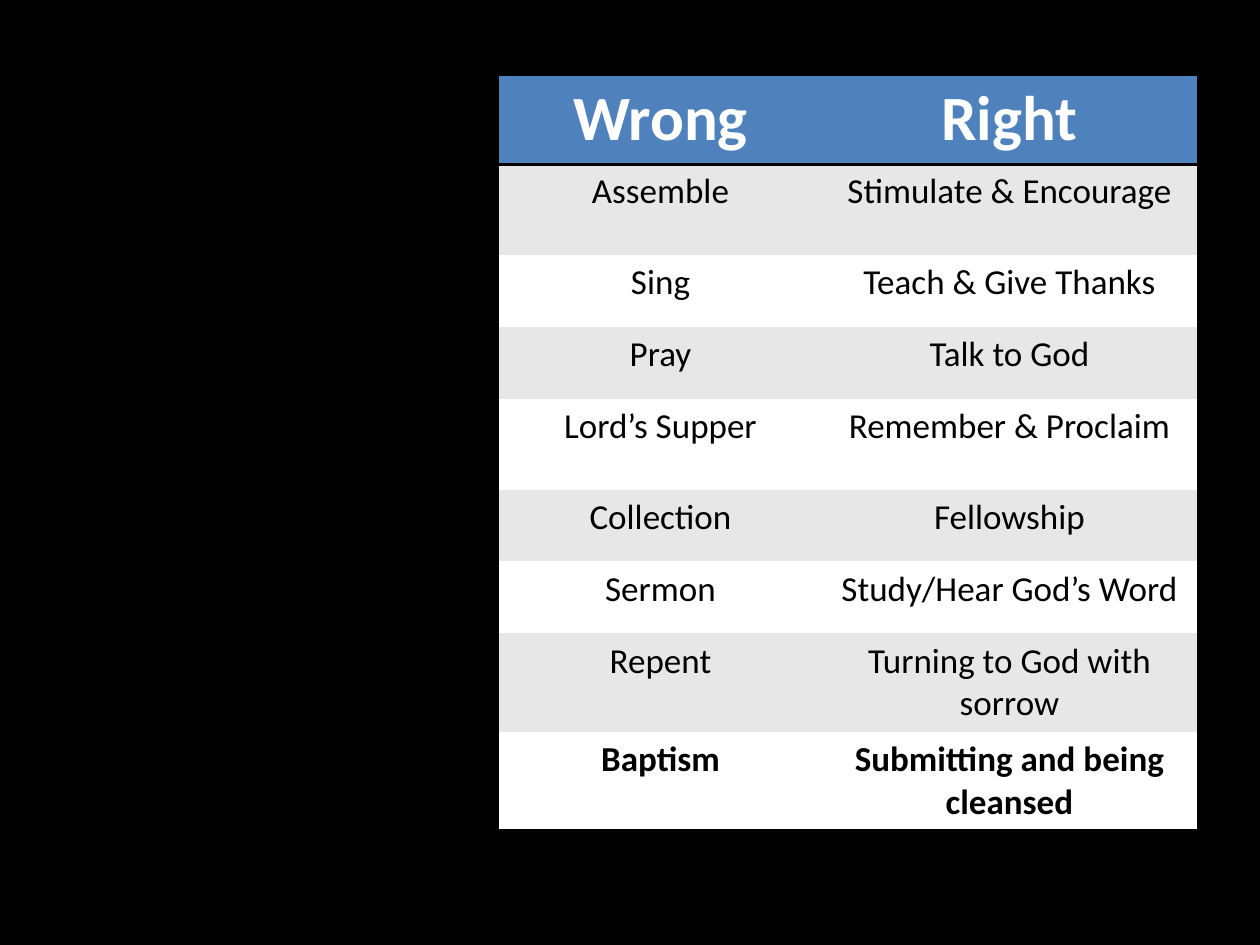
from pptx import Presentation
from pptx.dml.color import RGBColor
from pptx.enum.text import PP_ALIGN
from pptx.oxml.ns import qn
from pptx.util import Cm, Pt
from lxml import etree

CENTER = PP_ALIGN.CENTER
COLORS = {
    "black": "000000",
    "white": "FFFFFF",
    "header": "4F81BD",
    "band": "E7E7E7",
}
BLANK_LAYOUT = 6
RULE_WIDTH = Pt(2)
HEADINGS = ("Wrong", "Right")
VIEWS = [
    ("Assemble", "Stimulate & Encourage"),
    ("Sing", "Teach & Give Thanks"),
    ("Pray", "Talk to God"),
    ("Lord’s Supper", "Remember & Proclaim"),
    ("Collection", "Fellowship"),
    ("Sermon", "Study/Hear God’s Word"),
    ("Repent", "Turning to God with sorrow"),
    ("Baptism", "Submitting and being cleansed"),
]
TALL_ROWS = (1, 4)


def rgb(name):
    return RGBColor.from_string(COLORS[name])


def write(frame, text, size=20, color="black", bold=False, align=CENTER):
    paragraph = frame.paragraphs[0]
    paragraph.alignment = align
    run = paragraph.add_run()
    run.text = text
    run.font.name = "Calibri"
    run.font.size = Pt(size)
    run.font.bold = bold
    run.font.color.rgb = rgb(color)


def set_borders(cell, ruled_sides):
    properties = cell._tc.get_or_add_tcPr()
    for side in "LRTB":
        border = etree.SubElement(properties, qn(f"a:ln{side}"))
        if side in ruled_sides:
            border.set("w", str(RULE_WIDTH))
            fill = etree.SubElement(border, qn("a:solidFill"))
            etree.SubElement(fill, qn("a:srgbClr"), val=COLORS["black"])
        else:
            etree.SubElement(border, qn("a:noFill"))


def add_comparison(slide, left, top, width, height):
    rows = [HEADINGS] + VIEWS
    last = len(rows) - 1
    comparison = slide.shapes.add_table(
        len(rows), len(HEADINGS), left, top, width, height
    ).table
    comparison.horz_banding = False
    comparison.columns[0].width = Cm(6.53)
    comparison.columns[1].width = width - Cm(6.53)
    ruled_sides = {0: "TB", 1: "T", last: "B"}

    for index, texts in enumerate(rows):
        is_header = index == 0
        if is_header:
            row_height, background = 1.68, "header"
        else:
            row_height = 1.83 if index in TALL_ROWS else 1.45
            background = "band" if index % 2 else "white"
        comparison.rows[index].height = Cm(row_height)
        for column, text in enumerate(texts):
            cell = comparison.cell(index, column)
            set_borders(cell, ruled_sides.get(index, ""))
            cell.fill.solid()
            cell.fill.fore_color.rgb = rgb(background)
            write(
                cell.text_frame,
                text,
                size=36 if is_header else 20,
                color="white" if is_header else "black",
                bold=index in (0, last),
            )


def main():
    deck = Presentation()
    deck.slide_width, deck.slide_height = Cm(25.4), Cm(19.05)
    slide = deck.slides.add_slide(deck.slide_layouts[BLANK_LAYOUT])
    slide.background.fill.solid()
    slide.background.fill.fore_color.rgb = rgb("black")
    add_comparison(slide, Cm(10.05), Cm(1.5), Cm(14.07), Cm(14.04))
    deck.save("out.pptx")


if __name__ == "__main__":
    main()
